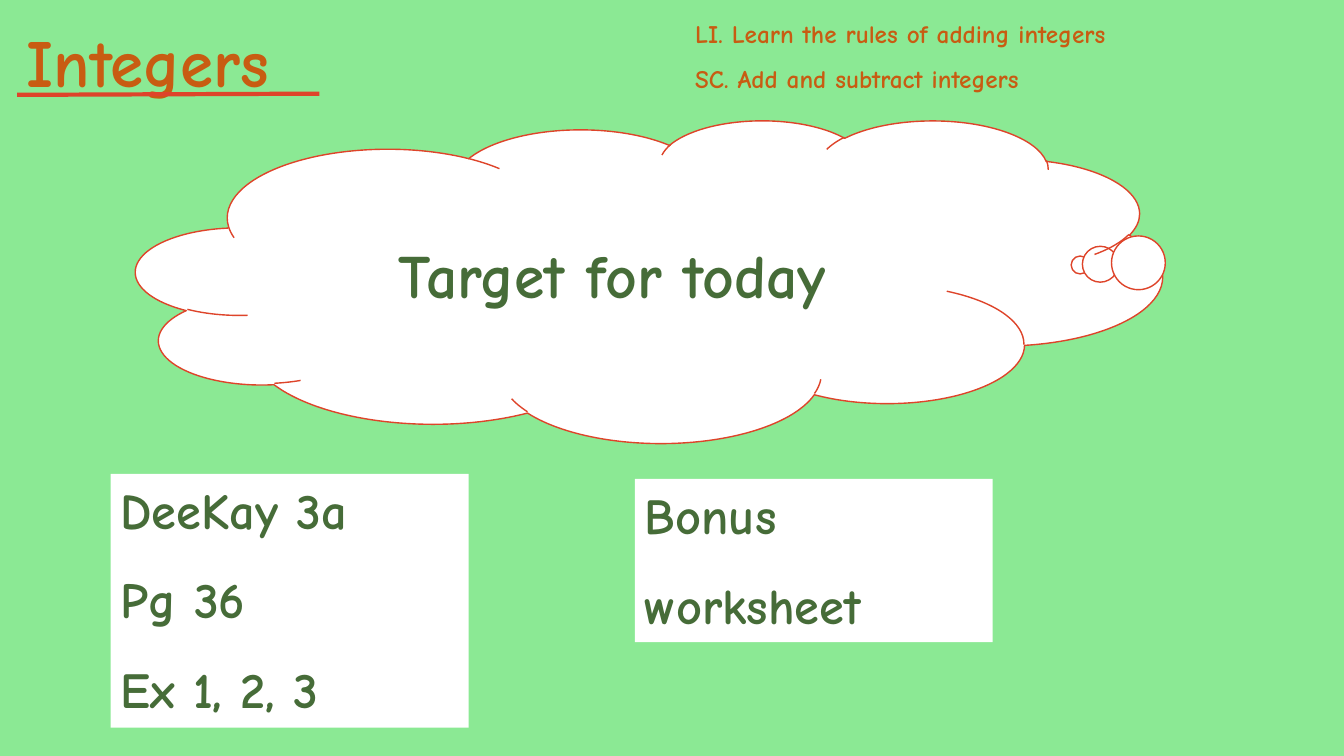
from lxml import etree
from pptx import Presentation
from pptx.dml.color import RGBColor
from pptx.enum.shapes import MSO_CONNECTOR, MSO_SHAPE
from pptx.enum.text import MSO_ANCHOR, MSO_AUTO_SIZE, PP_ALIGN
from pptx.oxml.ns import qn
from pptx.util import Cm, Pt

LEFT, CENTER = PP_ALIGN.LEFT, PP_ALIGN.CENTER
TOP, MIDDLE = MSO_ANCHOR.TOP, MSO_ANCHOR.MIDDLE
GROW = MSO_AUTO_SIZE.SHAPE_TO_FIT_TEXT
NO_FIT = MSO_AUTO_SIZE.NONE
CLOUD, RECT = MSO_SHAPE.CLOUD_CALLOUT, MSO_SHAPE.RECTANGLE
STRAIGHT = MSO_CONNECTOR.STRAIGHT

FONT = "Comic Neue"
HUES = {
    "back": "8BE994",
    "card": "FFFFFF",
    "edge": "DE442A",
    "task": "466C38",
    "head": "C85C12",
}
GAP = 0.58  # half a line, as a share of the font size


def hue(name):
    return RGBColor.from_string(HUES[name])


class Board:
    """Holds the slide and draws its parts in the lesson's style."""

    def __init__(self, deck):
        self.slide = deck.slides.add_slide(deck.slide_layouts[5])
        self.shapes = self.slide.shapes
        fill = self.slide.background.fill
        fill.solid()
        fill.fore_color.rgb = hue("back")

    def label(self, shape, text, size, color, align=LEFT, anchor=TOP, fit=GROW):
        frame = shape.text_frame
        frame.text = text
        frame.word_wrap = True
        frame.auto_size = fit
        frame.vertical_anchor = anchor
        for i, para in enumerate(frame.paragraphs):
            para.alignment = align
            para.space_before = Pt(size * GAP if i else 0)
            for run in para.runs:
                font = run.font
                font.name, font.size, font.bold = FONT, Pt(size), True
                font.color.rgb = hue(color)

    def title(self, text, x, y, w, h):
        shape = self.shapes.title
        shape.left, shape.top, shape.width, shape.height = map(Cm, (x, y, w, h))
        self.label(shape, text, 48, "head")

    def note(self, text, x, y, w, h):
        box = self.shapes.add_textbox(*map(Cm, (x, y, w, h)))
        self.label(box, text, 18, "head")

    def panel(self, kind, x, y, w, h):
        shape = self.shapes.add_shape(kind, *map(Cm, (x, y, w, h)))
        shape.shadow.inherit = False
        shape.fill.solid()
        shape.fill.fore_color.rgb = hue("card")
        return shape

    def card(self, text, x, y, w, h):
        shape = self.panel(RECT, x, y, w, h)
        shape.line.fill.background()
        self.label(shape, text, 36, "task")

    def cloud(self, text, x, y, w, h, tail):
        shape = self.panel(CLOUD, x, y, w, h)
        shape.line.color.rgb = hue("edge")
        shape.line.width = Pt(1)
        for i, value in enumerate(tail):
            shape.adjustments[i] = value
        self.label(shape, text, 44, "task", CENTER, MIDDLE, NO_FIT)

    def rule(self, x1, y1, x2, y2):
        line = self.shapes.add_connector(STRAIGHT, *map(Cm, (x1, y1, x2, y2)))
        line.line.color.rgb = hue("edge")
        line.line.width = Pt(3)
        etree.SubElement(line._element.spPr, qn("a:effectLst"))


def main():
    deck = Presentation()
    deck.slide_width, deck.slide_height = Cm(33.87), Cm(19.05)
    board = Board(deck)
    board.cloud("Target for today", 3.43, 3.02, 25.86, 8.13, (0.42, -0.05))
    board.card("DeeKay 3a\nPg 36\nEx 1, 2, 3", 2.79, 11.94, 9.02, 6.4)
    board.title("Integers", 0.41, 0.38, 10.34, 2.31)
    board.rule(0.43, 2.39, 8.05, 2.36)
    board.card("Bonus\nworksheet", 16, 12.07, 9.02, 4.11)
    goals = "LI. Learn the rules of adding integers\nSC. Add and subtract integers"
    board.note(goals, 17.27, 0.33, 16.4, 3.33)
    deck.save("out.pptx")


if __name__ == "__main__":
    main()
